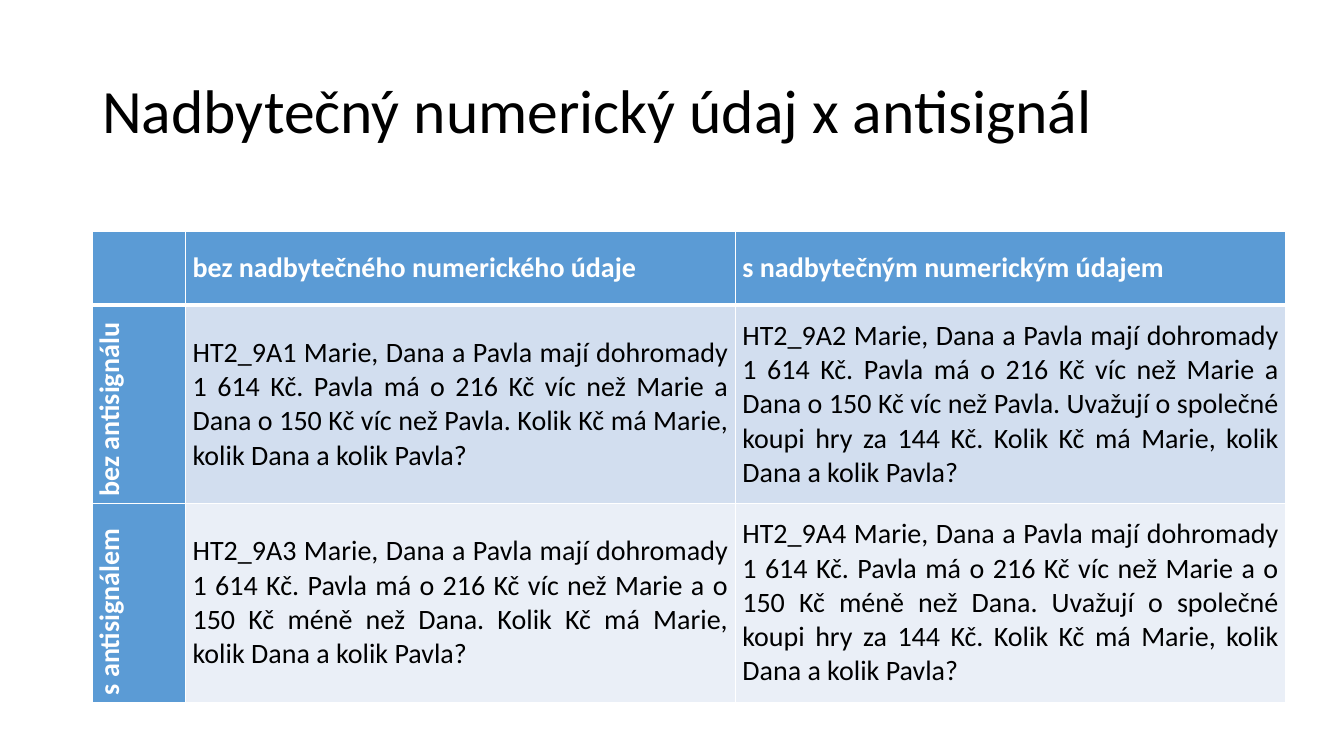
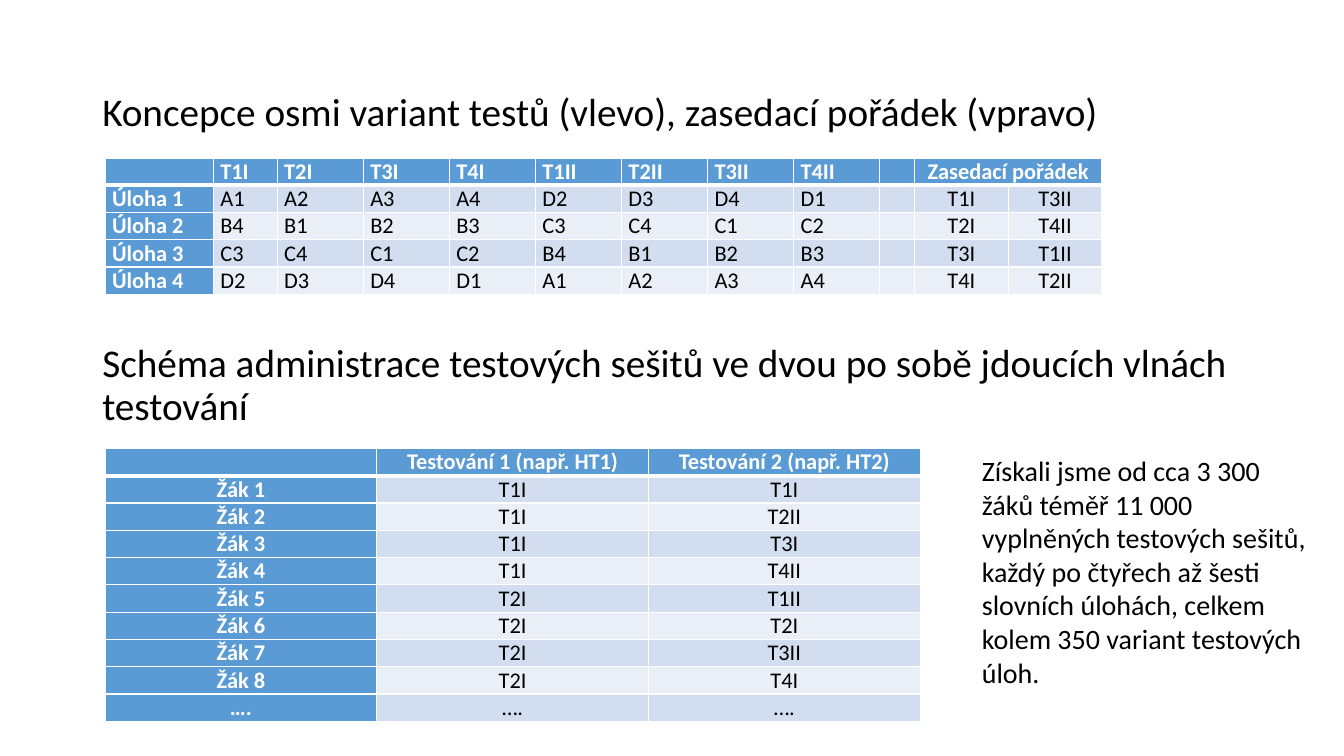
import pptx
import pptx.dml.color
import pptx.enum.text
import pptx.util
from lxml import etree

NS = "http://schemas.openxmlformats.org/drawingml/2006/main"
UNIT = pptx.util.Inches(1) / 12  # the slide is a grid of 160 columns by 90 rows
ALIGN = pptx.enum.text.PP_ALIGN
ANCHOR = pptx.enum.text.MSO_ANCHOR
SIDES = {"l": ALIGN.LEFT, "c": ALIGN.CENTER, "j": ALIGN.JUSTIFY}


def grid(*cells):
    return [pptx.util.Emu(round(n * UNIT)) for n in cells]


def color(code):
    return pptx.dml.color.RGBColor.from_string(code)


def node(root, tag, **attrs):
    return etree.SubElement(root, f"{{{NS}}}{tag}", attrs)


def write(frame, text, size=20, ink="000000", bold=False, align="l", lead=None):
    para = frame.paragraphs[0]
    para.alignment = SIDES[align]
    if lead:
        para.line_spacing = lead
    if not text:
        # An empty cell needs its own size to keep the row low
        node(para._p, "endParaRPr", sz=str(size * 100))
        return
    run = para.add_run()
    run.text = text
    run.font.name = Deck.face
    run.font.size = pptx.util.Pt(size)
    run.font.bold = bold
    run.font.color.rgb = color(ink)


def edge(cell, top, low):
    """Draw the four cell borders; top and low are widths in points."""
    props = cell._tc.get_or_add_tcPr()
    for spot, (side, width) in enumerate(
            [("L", 1), ("R", 1), ("T", top), ("B", low)]):
        line = etree.Element(f"{{{NS}}}ln{side}", w=str(pptx.util.Pt(width)))
        node(node(line, "solidFill"), "srgbClr", val=Deck.white)
        props.insert(spot, line)


class Deck:
    face = "Calibri"
    white = "FFFFFF"
    head = "5B9BD5"
    bands = ("EAEFF7", "D2DEEF")

    def __init__(self):
        self.file = pptx.Presentation()
        self.file.slide_width, self.file.slide_height = grid(160, 90)
        self.page = None

    def slide(self):
        self.page = self.file.slides.add_slide(self.file.slide_layouts[6])

    def text(self, box, words, anchor=ANCHOR.TOP, **style):
        frame = self.page.shapes.add_textbox(*grid(*box)).text_frame
        frame.word_wrap = True
        frame.vertical_anchor = anchor
        write(frame, words, **style)

    def title(self, words, size, top=4.8):
        self.text((11, top, 138, 17.4), words, ANCHOR.MIDDLE, size=size, lead=0.9)

    def table(self, left, top, cols, rows, data, aligns, size, turn=False):
        """Place a table; aligns has a letter per column, turn rotates row heads."""
        box = grid(left, top, sum(cols), sum(rows))
        table = self.page.shapes.add_table(len(rows), len(cols), *box).table
        for parts, name, sizes in ((table.columns, "width", cols),
                                   (table.rows, "height", rows)):
            for part, length in zip(parts, grid(*sizes)):
                setattr(part, name, length)
        for r, row in enumerate(data):
            for c, words in enumerate(row):
                cell = table.cell(r, c)
                lead = r == 0 or c == 0
                cell.margin_left = cell.margin_right = pptx.util.Inches(0.07)
                cell.margin_top = cell.margin_bottom = 0
                cell.vertical_anchor = ANCHOR.MIDDLE
                cell.fill.solid()
                cell.fill.fore_color.rgb = color(self.head if lead else self.bands[r % 2])
                edge(cell, top=3 if r == 1 else 1, low=3 if r == 0 else 1)
                if turn and r and c == 0:
                    cell._tc.get_or_add_tcPr().set("vert", "vert270")
                write(cell.text_frame, words, size=size, bold=lead, align=aligns[c],
                      ink=self.white if lead else "000000")
        return table


def signals(deck):
    deck.slide()
    deck.title("Nadbytečný numerický údaj x antisignál", 44)
    data = [
        ["", "bez nadbytečného numerického údaje", "s nadbytečným numerickým údajem"],
        ["bez antisignálu",
         "HT2_9A1 Marie, Dana a Pavla mají dohromady 1 614 Kč. Pavla má o 216 Kč víc "
         "než Marie a Dana o 150 Kč víc než Pavla. Kolik Kč má Marie, kolik Dana "
         "a kolik Pavla?",
         "HT2_9A2 Marie, Dana a Pavla mají dohromady 1 614 Kč. Pavla má o 216 Kč víc "
         "než Marie a Dana o 150 Kč víc než Pavla. Uvažují o společné koupi hry "
         "za 144 Kč. Kolik Kč má Marie, kolik Dana a kolik Pavla?"],
        ["s antisignálem",
         "HT2_9A3 Marie, Dana a Pavla mají dohromady 1 614 Kč. Pavla má o 216 Kč víc "
         "než Marie a o 150 Kč méně než Dana. Kolik Kč má Marie, kolik Dana "
         "a kolik Pavla?",
         "HT2_9A4 Marie, Dana a Pavla mají dohromady 1 614 Kč. Pavla má o 216 Kč víc "
         "než Marie a o 150 Kč méně než Dana. Uvažují o společné koupi hry "
         "za 144 Kč. Kolik Kč má Marie, kolik Dana a kolik Pavla?"],
    ]
    deck.table(11, 27.6, [11.1, 65.45, 65.55], [8.7] + [23.65] * 2, data, "jjj", 20,
               turn=True)


def tests(deck):
    deck.slide()
    deck.title("Koncepce osmi variant testů (vlevo), zasedací pořádek (vpravo)", 28)
    plan = [line.split("|") for line in (
        "|T1I|T2I|T3I|T4I|T1II|T2II|T3II|T4II||Zasedací pořádek|",
        "Úloha 1|A1|A2|A3|A4|D2|D3|D4|D1||T1I|T3II",
        "Úloha 2|B4|B1|B2|B3|C3|C4|C1|C2||T2I|T4II",
        "Úloha 3|C3|C4|C1|C2|B4|B1|B2|B3||T3I|T1II",
        "Úloha 4|D2|D3|D4|D1|A1|A2|A3|A4||T4I|T2II")]
    cols = [12.9, 7.6] + [10.25] * 7 + [4.15] + [11.15] * 2
    seats = deck.table(12.5, 18.8, cols, [3.25] * 5, plan, "j" * 10 + "cc", 16)
    seats.cell(0, 10).merge(seats.cell(0, 11))

    deck.title("Schéma administrace testových sešitů ve dvou po sobě jdoucích "
               "vlnách testování", 28, top=37.3)
    second = "T1I T2II T3I T4II T1II T2I T3II T4I".split()
    waves = [["", "Testování 1 (např. HT1)", "Testování 2 (např. HT2)"]]
    waves += [[f"Žák {n}", "T1I" if n <= 4 else "T2I", test]
              for n, test in enumerate(second, 1)]
    waves.append(["…."] * 3)
    deck.table(12.5, 53.4, [32.35] * 3, [3.25] * 10, waves, "ccc", 16)
    deck.text((115.7, 53.4, 41.6, 29.5),
              "Získali jsme od cca 3 300 žáků téměř 11 000 vyplněných testových sešitů, "
              "každý po čtyřech až šesti slovních úlohách, celkem kolem 350 variant "
              "testových úloh.")


def main():
    deck = Deck()
    signals(deck)
    tests(deck)
    deck.file.save("out.pptx")


if __name__ == "__main__":
    main()
